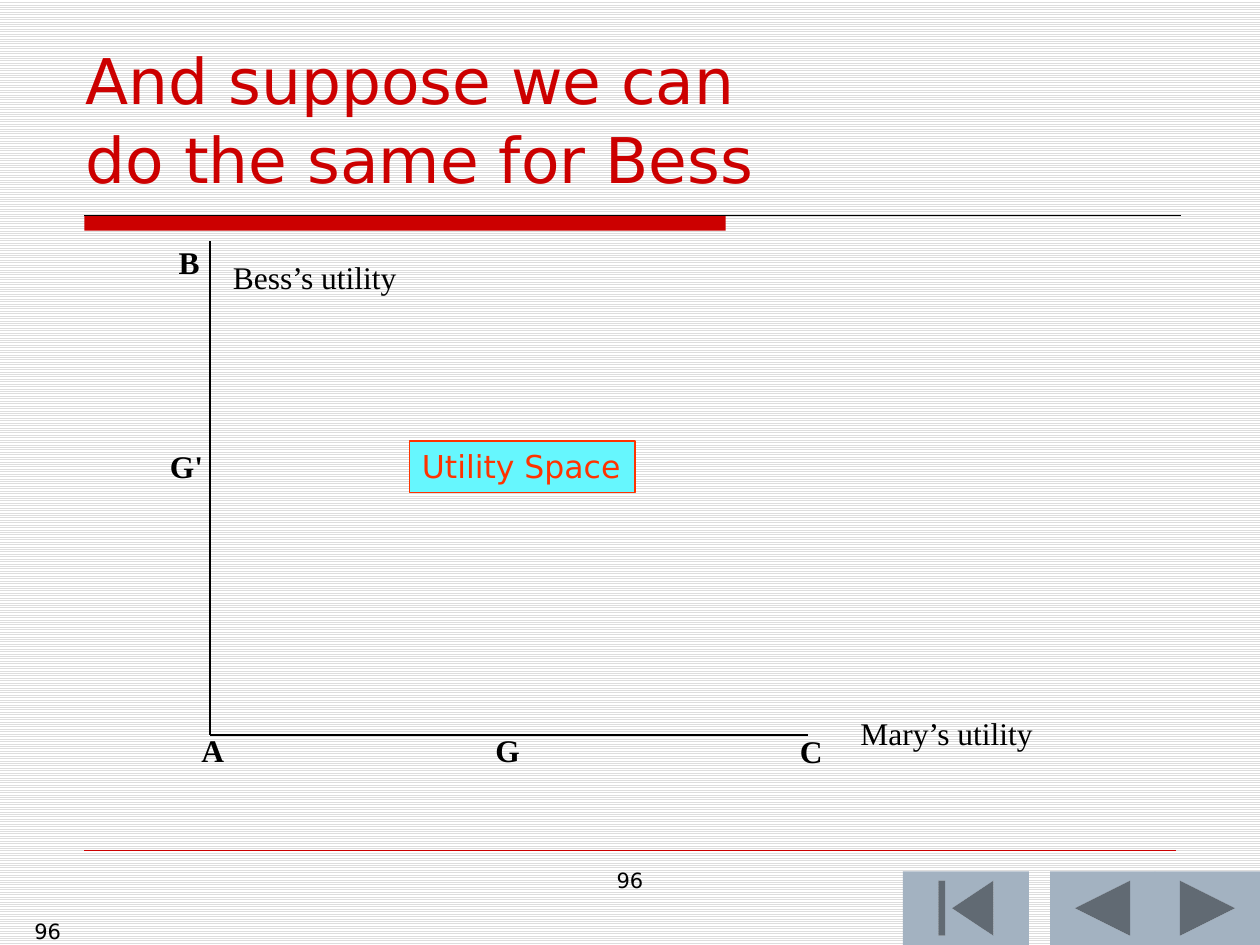
"""Build the utility space slide with its axes, labels and navigation buttons."""
from pptx import Presentation
from pptx.dml.color import RGBColor
from pptx.enum.dml import MSO_PATTERN
from pptx.enum.shapes import MSO_CONNECTOR, MSO_SHAPE
from pptx.enum.text import MSO_AUTO_SIZE, PP_ALIGN
from pptx.oxml.ns import qn
from pptx.util import Pt
from lxml.etree import SubElement

COLORS = {"red": "CC0000", "black": "000000", "white": "FFFFFF", "stripe": "DDDDDD",
          "button": "A3B2C1", "cyan": "66F7FE", "orange": "FF3300"}
SANS, SERIF = "DejaVu Sans", "Times New Roman"

TITLE = ["And suppose we can", "do the same for Bess"]
TITLE_BOX = (42, 18, 642, 93.6)
TITLE_BAR = (48.24, 123.1, 366.5, 8.65)
ORIGIN = (120, 420)
LINES = [
    ((48.24, 123.1), (674.6, 123.1), "black", 0.75),
    ((48.24, 486), (672, 486), "red", 0.25),
    (ORIGIN, (462, 420), "black", 0.75),
    (ORIGIN, (120, 138), "black", 0.75),
]
BUTTONS = [
    (MSO_SHAPE.ACTION_BUTTON_BACK_OR_PREVIOUS, 600, 60),
    (MSO_SHAPE.ACTION_BUTTON_BEGINNING, 516, 72),
    (MSO_SHAPE.ACTION_BUTTON_FORWARD_OR_NEXT, 660, 60),
]
BUTTON_TOP, BUTTON_HEIGHT = 498, 42
PAGE_NUMBER = "96"
PAGE_NUMBERS = [((0, 521.3, 42, 18.7), PP_ALIGN.RIGHT),
                ((246, 492, 228, 37.5), PP_ALIGN.CENTER)]
POINTS = [
    ("A", (108, 414, 36, 29), True),
    ("G", (276, 414, 29, 29), False),
    ("C", (450, 414.7, 27.4, 29), False),
    ("G'", (90, 252, 72, 29), True),
    ("B", (95, 135.4, 26.6, 29), False),
]
AXIS_NAMES = [
    ("Mary’s utility", (484.6, 404.6, 113.8, 29), False),
    ("Bess’s utility", (126, 144, 132, 29), True),
]
SPACE_NAME = ("Utility Space", (234, 252, 128.9, 29.5))


def rgb(name):
    return RGBColor.from_string(COLORS[name])


def add_text(slide, lines, box, size, font, color="black", bold=False,
             align=PP_ALIGN.LEFT, wrap=True, grow=True, spacing=None):
    label = slide.shapes.add_textbox(*map(Pt, box))
    frame = label.text_frame
    frame.text = "\n".join(lines)
    frame.word_wrap = wrap
    frame.auto_size = MSO_AUTO_SIZE.SHAPE_TO_FIT_TEXT if grow else MSO_AUTO_SIZE.NONE
    for paragraph in frame.paragraphs:
        paragraph.alignment = align
        paragraph.line_spacing = spacing
        paragraph.font.size = Pt(size)
        paragraph.font.name = font
        paragraph.font.bold = bold
        paragraph.font.color.rgb = rgb(color)
    return label


def add_block(slide, kind, box, color):
    block = slide.shapes.add_shape(kind, *map(Pt, box))
    block.shadow.inherit = False
    block.fill.solid()
    block.fill.fore_color.rgb = rgb(color)
    block.line.fill.background()


def add_line(slide, start, end, color, width):
    line = slide.shapes.add_connector(MSO_CONNECTOR.STRAIGHT, *map(Pt, start + end))
    line.line.color.rgb = rgb(color)
    line.line.width = Pt(width)
    SubElement(line._element.spPr, qn("a:effectLst"))


def main():
    deck = Presentation()
    deck.slide_width, deck.slide_height = Pt(720), Pt(540)
    slide = deck.slides.add_slide(deck.slide_layouts[6])
    stripes = slide.background.fill
    stripes.patterned()
    stripes.pattern = MSO_PATTERN.LIGHT_HORIZONTAL
    stripes.fore_color.rgb = rgb("stripe")
    stripes.back_color.rgb = rgb("white")

    add_block(slide, MSO_SHAPE.RECTANGLE, TITLE_BAR, "red")
    for line in LINES:
        add_line(slide, *line)
    for kind, left, width in BUTTONS:
        add_block(slide, kind, (left, BUTTON_TOP, width, BUTTON_HEIGHT), "button")
    for box, align in PAGE_NUMBERS:
        add_text(slide, [PAGE_NUMBER], box, 12, SANS, align=align, grow=False)
    for name, box, wrap in POINTS:
        add_text(slide, [name], box, 18, SERIF, bold=True, wrap=wrap)
    for name, box, wrap in AXIS_NAMES:
        add_text(slide, [name], box, 18, SERIF, wrap=wrap)

    name, box = SPACE_NAME
    space = add_text(slide, [name], box, 18, SANS, "orange", wrap=False)
    space.fill.solid()
    space.fill.fore_color.rgb = rgb("cyan")
    space.line.color.rgb = rgb("orange")
    space.line.width = Pt(0.75)

    add_text(slide, TITLE, TITLE_BOX, 36, SANS, "red", spacing=1.05)
    deck.save("out.pptx")


if __name__ == "__main__":
    main()
